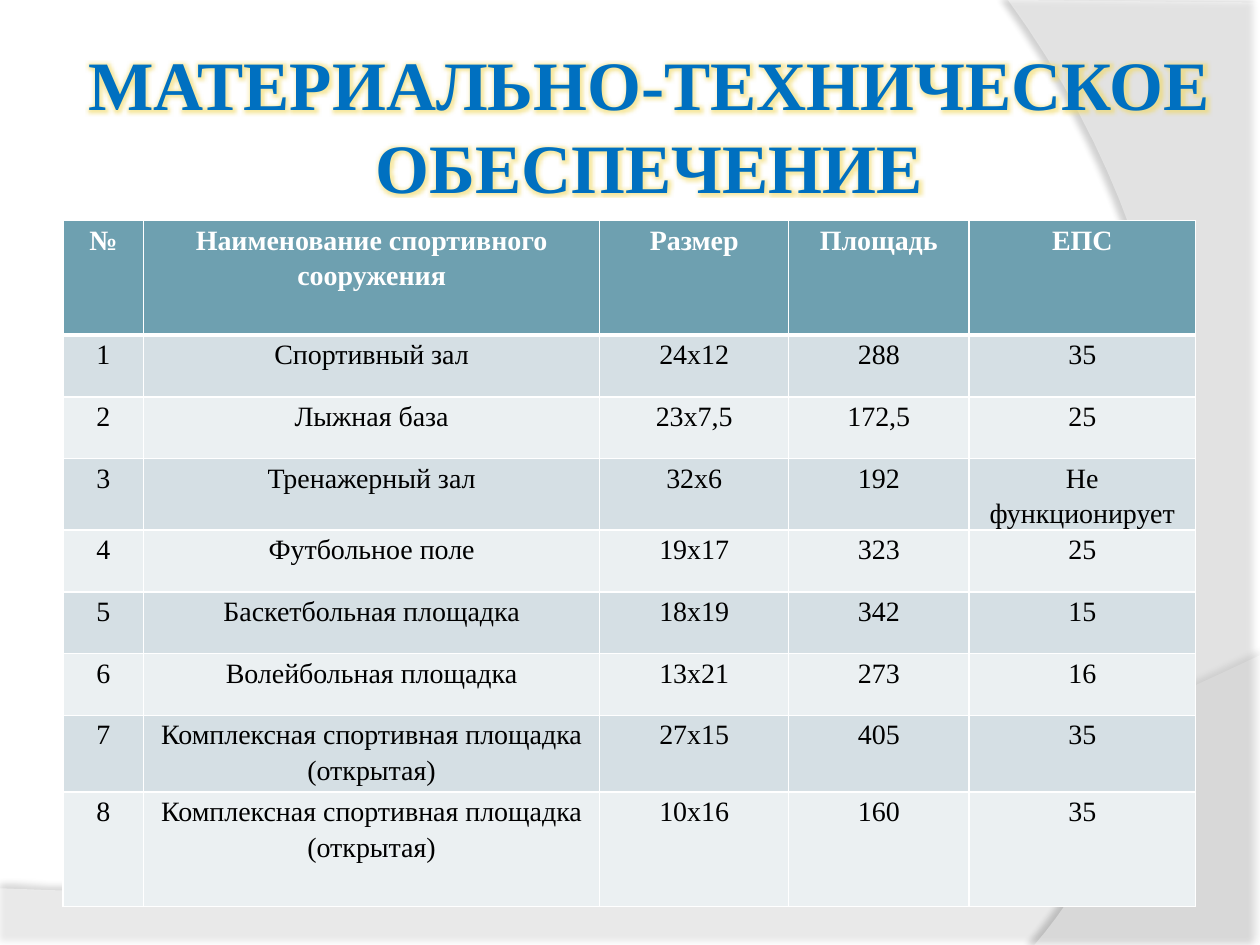
from lxml import etree
from pptx import Presentation
from pptx.dml.color import RGBColor
from pptx.enum.text import MSO_ANCHOR, MSO_AUTO_SIZE, PP_ALIGN
from pptx.oxml import parse_xml
from pptx.oxml.ns import nsdecls, qn
from pptx.util import Inches, Pt

CENTER = PP_ALIGN.CENTER
MIDDLE = MSO_ANCHOR.MIDDLE
NO_AUTOFIT = MSO_AUTO_SIZE.NONE

THEME = {
    "font": "Times New Roman",
    "title": {"size": 39.6, "color": "0070C0", "glow": "F0D860"},
    "header": {"size": 16, "color": "FFFFFF", "fill": "6EA0B0"},
    "body": {"size": 16, "color": "000000", "fills": ("D5DFE4", "EBF0F2")},
    "white": "FFFFFF",
    "black": "000000",
}


def set_font(font, size, color, bold):
    values = {"name": THEME["font"], "size": Pt(size), "bold": bold}
    for name, value in values.items():
        setattr(font, name, value)
    font.color.rgb = RGBColor.from_string(color)


def bezier_points(start, control1, control2, end, steps=40):
    """Return the points after start along a cubic curve."""
    points = []
    for step in range(1, steps + 1):
        t = step / steps
        weights = ((1 - t) ** 3, 3 * t * (1 - t) ** 2, 3 * t ** 2 * (1 - t), t ** 3)
        corners = (start, control1, control2, end)
        points.append(tuple(sum(w * corner[axis] for w, corner in zip(weights, corners))
                            for axis in (0, 1)))
    return points


deck = Presentation()
deck.slide_width = Inches(10)
deck.slide_height = Inches(7.5)
slide = deck.slides.add_slide(deck.slide_layouts[5])

# Translucent background waves
bottom_wave = [(0, 7.05), (0, 7.51), (10, 7.51), (10, 5.2)]
bottom_wave += bezier_points((10, 5.2), (5.59, 7.29), (3.91, 7.19), (0, 7.05))
right_wave = [(10, 0.02), (10, 7.5), (8.21, 7.5)]
right_wave += bezier_points((8.21, 7.5), (9.35, 6.19), (10.18, 3), (8, 0))

# Outline, fill opacity, shadow opacity, shadow distance, shadow direction
waves = [
    (bottom_wave, 45, 35, 3.5, 270),
    (right_wave, 40, 45, 4, 180),
]
for points, opacity, shadow_opacity, distance, direction in waves:
    outline = [(Inches(x), Inches(y)) for x, y in points]
    builder = slide.shapes.build_freeform(*outline[0])
    builder.add_line_segments(outline[1:], close=True)
    wave = builder.convert_to_shape()
    wave.fill.solid()
    wave.fill.fore_color.rgb = RGBColor.from_string(THEME["white"])
    wave.line.fill.background()
    properties = wave._element.spPr
    color = properties.find(qn("a:solidFill"))[0]
    etree.SubElement(color, qn("a:alpha"), val=str(opacity * 1000))
    properties.append(parse_xml(
        f'<a:effectLst {nsdecls("a")}><a:outerShdw blurRad="{Pt(4)}" dist="{Pt(distance)}" '
        f'dir="{direction * 60000}" algn="ctr" rotWithShape="0">'
        f'<a:srgbClr val="{THEME["black"]}"><a:alpha val="{shadow_opacity * 1000}"/></a:srgbClr>'
        '</a:outerShdw></a:effectLst>'))

# Title, brought in front of the waves
title = slide.shapes.title
slide.shapes._spTree.append(title._element)
title.left, title.top = Inches(0.59), Inches(0.29)
title.width, title.height = Inches(9.13), Inches(2.05)
frame = title.text_frame
frame_format = {
    "margin_left": Inches(0.05), "margin_right": Inches(0.05),
    "margin_top": Inches(0.05), "margin_bottom": Inches(0.05),
    "word_wrap": True, "auto_size": NO_AUTOFIT, "vertical_anchor": MIDDLE,
}
for name, value in frame_format.items():
    setattr(frame, name, value)
frame.text = "МАТЕРИАЛЬНО-ТЕХНИЧЕСКОЕ ОБЕСПЕЧЕНИЕ\v"
para = frame.paragraphs[0]
para.alignment = CENTER
style = THEME["title"]
span = para.runs[0]
set_font(span.font, style["size"], style["color"], True)
etree.SubElement(para._p, qn("a:endParaRPr"), sz=str(round(style["size"] * 100)))
span._r.rPr.find(qn("a:solidFill")).addnext(parse_xml(
    f'<a:effectLst {nsdecls("a")}><a:glow rad="{Pt(5)}"><a:srgbClr val="{style["glow"]}">'
    '<a:alpha val="60000"/></a:srgbClr></a:glow></a:effectLst>'))

# Table of sports facilities
rows = [
    ("№", "Наименование спортивного сооружения", "Размер", "Площадь", "ЕПС"),
    ("1", "Спортивный зал", "24х12", "288", "35"),
    ("2", "Лыжная база", "23х7,5", "172,5", "25"),
    ("3", "Тренажерный зал", "32х6", "192", "Не функционирует"),
    ("4", "Футбольное поле", "19х17", "323", "25"),
    ("5", "Баскетбольная площадка", "18х19", "342", "15"),
    ("6", "Волейбольная площадка", "13х21", "273", "16"),
    ("7", "Комплексная спортивная площадка (открытая)", "27х15", "405", "35"),
    ("8", "Комплексная спортивная площадка\n(открытая)", "10х16", "160", "35"),
]
column_widths = [0.64, 3.62, 1.5, 1.43, 1.8]
row_heights = [0.91] + [0.49] * 6 + [0.61, 0.91]
table = slide.shapes.add_table(
    len(rows), len(column_widths), Inches(0.5), Inches(1.75),
    Inches(sum(column_widths)), Inches(sum(row_heights))).table
for column, width in zip(table.columns, column_widths):
    column.width = Inches(width)
for row, height in zip(table.rows, row_heights):
    row.height = Inches(height)

cell_format = {"margin_left": Inches(0.07), "margin_right": Inches(0.07),
               "margin_top": 0, "margin_bottom": 0}
for row_index, texts in enumerate(rows):
    is_header = row_index == 0
    style = THEME["header"] if is_header else THEME["body"]
    fill = style["fill"] if is_header else style["fills"][(row_index - 1) % 2]
    borders = {"lnL": 1, "lnR": 1, "lnT": 3 if row_index == 1 else 1,
               "lnB": 3 if is_header else 1}
    for column_index, text in enumerate(texts):
        cell = table.cell(row_index, column_index)
        for name, value in cell_format.items():
            setattr(cell, name, value)
        cell.text = text
        cell.fill.solid()
        cell.fill.fore_color.rgb = RGBColor.from_string(fill)
        for para in cell.text_frame.paragraphs:
            para.alignment = CENTER
            para.line_spacing = 1.15
            set_font(para.runs[0].font, style["size"], style["color"], is_header)
        for position, (side, width) in enumerate(borders.items()):
            cell._tc.tcPr.insert(position, parse_xml(
                f'<a:{side} {nsdecls("a")} w="{Pt(width)}"><a:solidFill>'
                f'<a:srgbClr val="{THEME["white"]}"/></a:solidFill></a:{side}>'))

deck.save("out.pptx")
